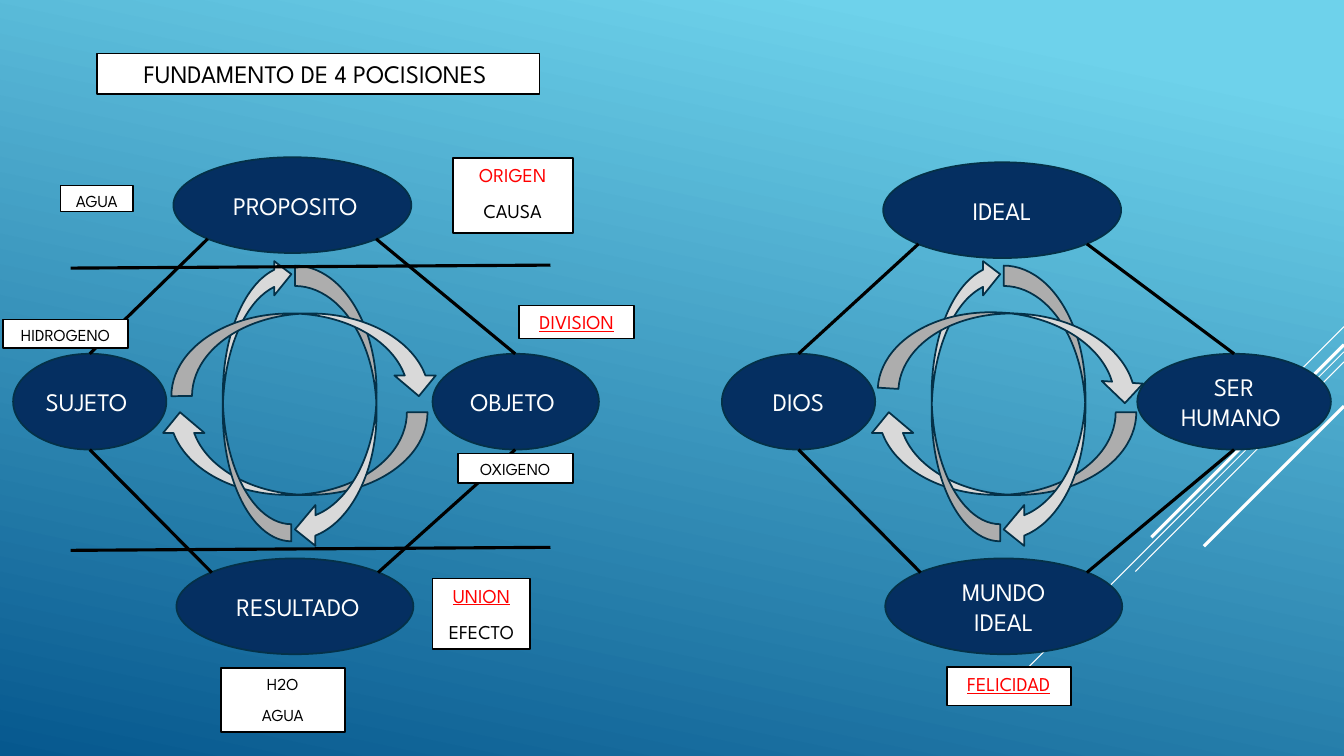
from pptx import Presentation
from pptx.dml.color import RGBColor
from pptx.enum.shapes import MSO_CONNECTOR, MSO_SHAPE
from pptx.enum.text import MSO_ANCHOR, PP_ALIGN
from pptx.oxml.ns import qn
from pptx.util import Inches, Pt
from lxml import etree

STRAIGHT = MSO_CONNECTOR.STRAIGHT
RECTANGLE, OVAL = MSO_SHAPE.RECTANGLE, MSO_SHAPE.OVAL
CURVED_ARROW = MSO_SHAPE.CURVED_DOWN_ARROW
TOP, MIDDLE = MSO_ANCHOR.TOP, MSO_ANCHOR.MIDDLE
CENTER = PP_ALIGN.CENTER

FONT = "League Spartan"
BLACK, WHITE, RED = "000000", "FFFFFF", "FF0000"
NAVY, OUTLINE, GRAY = "052F61", "043148", "D9D9D9"
SKY, DEEP_BLUE = "6ED2EB", "06588E"
DIAGRAM_OFFSET = 7.03

# Diagonal rays: start x, start y, end x, end y, width
RAYS = [
    (13.33, 3.24, 12.33, 4.24, 0.75),
    (13.33, 3.49, 10.07, 6.75, 0.75),
    (13.33, 3.59, 11.26, 5.67, 0.75),
    (13.33, 3.42, 11.42, 5.33, 2.25),
    (13.33, 4.03, 11.94, 5.42, 2.25),
]
# Positions: text, left, top, width
POSITIONS = [
    (" PROPOSITO", 1.72, 1.56, 2.36),
    (" RESULTADO", 1.75, 5.54, 2.35),
    ("OBJETO ", 4.29, 3.51, 1.65),
    ("SUJETO ", 0.13, 3.51, 1.52),
    ("IDEAL", 8.76, 1.61, 2.36),
    ("MUNDO IDEAL", 8.78, 5.54, 2.35),
    ("SER HUMANO ", 11.28, 3.51, 1.92),
    ("DIOS", 7.16, 3.51, 1.52),
]
# Cycle arrows: left, top, width, height, rotation
CYCLE = [
    (1.58, 4.09, 2.66, 0.82, 180),
    (1.14, 3.62, 2.82, 0.68, 270),
    (1.92, 3.64, 2.82, 0.81, 90),
]
LINKS = [
    # Level lines of the left diagram
    (0.7, 2.66, 5.46, 2.63),
    (0.7, 5.46, 5.46, 5.43),
    # Left diamond
    (0.89, 3.51, 2.06, 2.37),
    (3.73, 2.37, 5.11, 3.51),
    (5.11, 4.46, 3.75, 5.68),
    (0.89, 4.46, 2.1, 5.68),
    # Right diamond
    (9.11, 2.42, 7.92, 3.51),
    (7.92, 4.46, 9.13, 5.68),
    (12.24, 4.46, 10.78, 5.68),
    (10.78, 2.42, 12.24, 3.51),
]
# Labels: box, text size, lines of (text, colour, underline)
LABELS = [
    ((0.96, 0.53, 4.39, 0.4), 18, [("FUNDAMENTO DE 4 POCISIONES ", BLACK, False)]),
    ((4.49, 1.57, 1.19, 0.74), 14, [("ORIGEN", RED, False), ("CAUSA", BLACK, False)]),
    ((5.15, 3.03, 1.14, 0.33), 14, [("DIVISION", RED, True)]),
    ((4.29, 5.74, 0.97, 0.7), 14, [("UNION", RED, True), ("EFECTO", BLACK, False)]),
    ((4.54, 4.5, 1.14, 0.29), 12, [("OXIGENO", BLACK, False)]),
    ((0.03, 3.17, 1.24, 0.28), 12, [("HIDROGENO", BLACK, False)]),
    ((2.19, 6.63, 1.23, 0.63), 12, [("H2O", BLACK, False), ("AGUA", BLACK, False)]),
    ((0.6, 1.84, 0.72, 0.26), 12, [("AGUA", BLACK, False)]),
    ((9.39, 6.62, 1.23, 0.38), 14, [("FELICIDAD", RED, True)]),
]


def color(hex_text):
    return RGBColor.from_string(hex_text)


def set_background(slide):
    fill = slide.background.fill
    fill.gradient()
    fill.gradient_angle = 360 - 102
    for stop, position, tone in zip(fill.gradient_stops, (0.1, 1), (SKY, DEEP_BLUE)):
        stop.position = position
        stop.color.rgb = color(tone)


def add_line(slide, start_x, start_y, end_x, end_y, tone=BLACK, width=2.25):
    ends = [Inches(value) for value in (start_x, start_y, end_x, end_y)]
    connector = slide.shapes.add_connector(STRAIGHT, *ends)
    connector.line.color.rgb = color(tone)
    connector.line.width = Pt(width)
    etree.SubElement(connector._element.spPr, qn("a:effectLst"))


def add_figure(slide, kind, box, fill, outline, rotation=0):
    shape = slide.shapes.add_shape(kind, *[Inches(value) for value in box])
    shape.shadow.inherit = False
    shape.fill.solid()
    shape.fill.fore_color.rgb = color(fill)
    shape.line.color.rgb = color(outline)
    shape.line.width = Pt(1.25)
    shape.rotation = rotation
    return shape


def write_text(paragraph, text, size=18, tone=WHITE, underline=False, before=0, after=0):
    paragraph.alignment = CENTER
    paragraph.space_before = Pt(before)
    paragraph.space_after = Pt(after)
    run = paragraph.add_run()
    run.text = text
    run.font.name = FONT
    run.font.size = Pt(size)
    run.font.underline = underline
    run.font.color.rgb = color(tone)


def add_position(slide, text, left, top, width):
    shape = add_figure(slide, OVAL, (left, top, width, 0.95), NAVY, OUTLINE)
    frame = shape.text_frame
    frame.word_wrap = True
    frame.vertical_anchor = MIDDLE
    write_text(frame.paragraphs[0], text)


def add_label(slide, box, size, lines):
    frame = add_figure(slide, RECTANGLE, box, WHITE, BLACK).text_frame
    frame.word_wrap = True
    frame.vertical_anchor = TOP
    for index, (text, tone, underline) in enumerate(lines):
        paragraph = frame.add_paragraph() if index else frame.paragraphs[0]
        write_text(paragraph, text, size=size, tone=tone, underline=underline,
                   before=0.2 * size, after=6)


def add_cycle(slide, offset, top_rotation):
    top_arrow = (1.7, 3.11, 2.66, 0.82, top_rotation)
    for left, top, width, height, rotation in CYCLE + [top_arrow]:
        box = (left + offset, top, width, height)
        add_figure(slide, CURVED_ARROW, box, GRAY, OUTLINE, rotation)


def main():
    presentation = Presentation()
    presentation.slide_width = Inches(13.33)
    presentation.slide_height = Inches(7.5)
    slide = presentation.slides.add_slide(presentation.slide_layouts[6])

    # Backdrop
    set_background(slide)
    for *ends, width in RAYS:
        add_line(slide, *ends, tone=WHITE, width=width)

    # Both diagrams
    for position in POSITIONS:
        add_position(slide, *position)
    add_cycle(slide, 0, 0)
    add_cycle(slide, DIAGRAM_OFFSET, 3.6)
    for link in LINKS:
        add_line(slide, *link)

    # Title and labels
    for label in LABELS:
        add_label(slide, *label)

    presentation.save("out.pptx")


if __name__ == "__main__":
    main()
